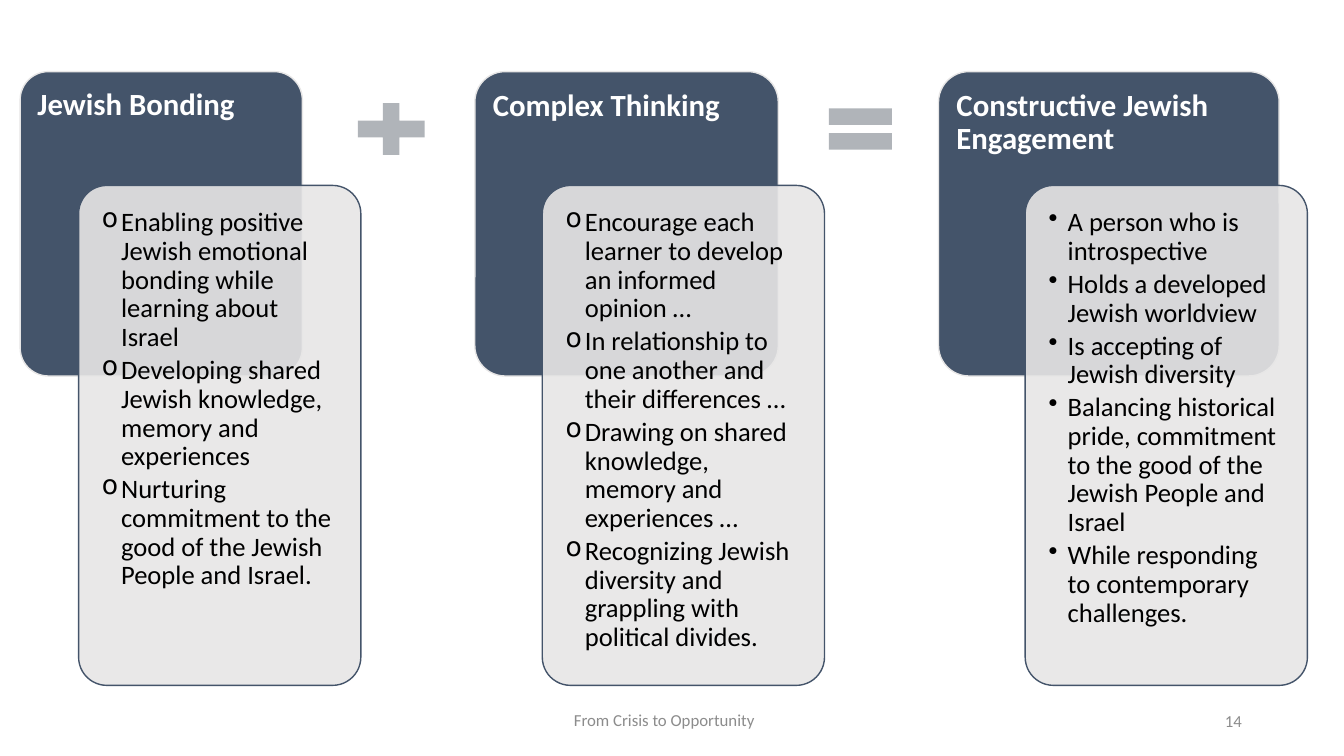
"""Builds the slide that adds Jewish bonding to complex thinking to reach engagement."""
import pptx
import pptx.util
import pptx.dml.color
import pptx.enum.shapes
import pptx.enum.text
import pptx.oxml
import pptx.oxml.ns
from lxml import etree

COLOURS = {"navy": "44546A", "pale": "E7E6E6", "sign": "B0B4B9",
           "white": "FFFFFF", "black": "000000", "footer": "8C8C8C"}
SHAPES = pptx.enum.shapes.MSO_SHAPE
ALIGN = pptx.enum.text.PP_ALIGN
ANCHOR = pptx.enum.text.MSO_ANCHOR
qn = pptx.oxml.ns.qn

deck = pptx.Presentation()
deck.slide_width = pptx.util.Inches(13.33)
deck.slide_height = pptx.util.Inches(7.5)
slide = deck.slides.add_slide(deck.slide_layouts[6])


def add_block(kind, percent, fill, outline=None, inset=0):
    left, top, width, height = (
        round(share / 100 * side) for share, side in
        zip(percent, (deck.slide_width, deck.slide_height) * 2))
    if kind is None:
        block = slide.shapes.add_textbox(left, top, width, height)
    else:
        block = slide.shapes.add_shape(kind, left, top, width, height)
        block.shadow.inherit = False
        block.fill.solid()
        block.fill.fore_color.rgb = pptx.dml.color.RGBColor.from_string(COLOURS[fill])
        if outline:
            block.line.color.rgb = pptx.dml.color.RGBColor.from_string(COLOURS[outline])
            block.line.width = pptx.util.Pt(1)
        else:
            block.line.fill.background()
    frame = block.text_frame
    frame.word_wrap = True
    frame.vertical_anchor = ANCHOR.TOP if kind else ANCHOR.MIDDLE
    if inset:
        frame.margin_left = frame.margin_top = pptx.util.Inches(inset)
        frame.margin_right = frame.margin_bottom = pptx.util.Inches(inset)
    return block


def write(paragraph, text, size, colour, bold=False, align=ALIGN.LEFT):
    paragraph.alignment = align
    run = paragraph.add_run()
    run.text = text
    run.font.name = "Calibri"
    run.font.size = pptx.util.Pt(size)
    run.font.bold = bold
    run.font.color.rgb = pptx.dml.color.RGBColor.from_string(COLOURS[colour])


header_top, header_height = 9.47, 40.27
card_top, card_width, card_height = 24.53, 21, 66.13
sign_top, sign_height = 12.4, 9.33
hanging = pptx.util.Inches(0.19)

columns = [
    ("Jewish Bonding", 1.5, 21, 5.85, "o", [
        "Enabling positive Jewish emotional bonding while learning about Israel",
        "Developing shared Jewish knowledge, memory and experiences",
        "Nurturing commitment to the good of the Jewish People and Israel."]),
    ("Complex Thinking", 35.33, 22.58, 40.35, "o", [
        "Encourage each learner to develop an informed opinion …",
        "In relationship to one another and their differences …",
        "Drawing on shared knowledge, memory and experiences …",
        "Recognizing Jewish diversity and grappling with political divides."]),
    ("Constructive Jewish Engagement", 69.83, 25.35, 76.28, "•", [
        "A person who is introspective",
        "Holds a developed Jewish worldview",
        "Is accepting of Jewish diversity",
        "Balancing historical pride, commitment to the good of the Jewish People and Israel",
        "While responding to contemporary challenges."]),
]

for title, header_left, header_width, card_left, bullet, points in columns:
    header = add_block(SHAPES.ROUNDED_RECTANGLE,
                       (header_left, header_top, header_width, header_height),
                       "navy", "pale", 0.09)
    header.adjustments[0] = 0.1
    heading = header.text_frame.paragraphs[0]
    heading.line_spacing = 0.9
    write(heading, title, 22, "white", bold=True)

    card = add_block(SHAPES.ROUNDED_RECTANGLE,
                     (card_left, card_top, card_width, card_height),
                     "pale", "navy", 0.15)
    card.adjustments[0] = 0.1
    card_colour = card.fill._xPr.find(qn("a:solidFill"))[0]
    etree.SubElement(card_colour, qn("a:alpha"), val="90000")
    for index, point in enumerate(points):
        frame = card.text_frame
        item = frame.add_paragraph() if index else frame.paragraphs[0]
        item.level = 1
        item.line_spacing = 0.9
        item.space_after = pptx.util.Pt(3)
        write(item, point, 19, "black")
        properties = item._p.get_or_add_pPr()
        properties.set("marL", str(hanging))
        properties.set("indent", str(-hanging))
        etree.SubElement(properties, qn("a:buChar"), char=bullet)

for sign, sign_left, sign_width in [(SHAPES.MATH_PLUS, 25.73, 6.75),
                                    (SHAPES.MATH_EQUAL, 60.83, 6.38)]:
    add_block(sign, (sign_left, sign_top, sign_width, sign_height), "sign")

for text, percent, align in [
        ("From Crisis to Opportunity", (32.55, 92.53, 33.75, 5.33), ALIGN.CENTER),
        ("14", (70.65, 92.67, 22.5, 5.33), ALIGN.RIGHT)]:
    footer = add_block(None, percent, None)
    write(footer.text_frame.paragraphs[0], text, 12, "footer", align=align)

deck.save("out.pptx")
